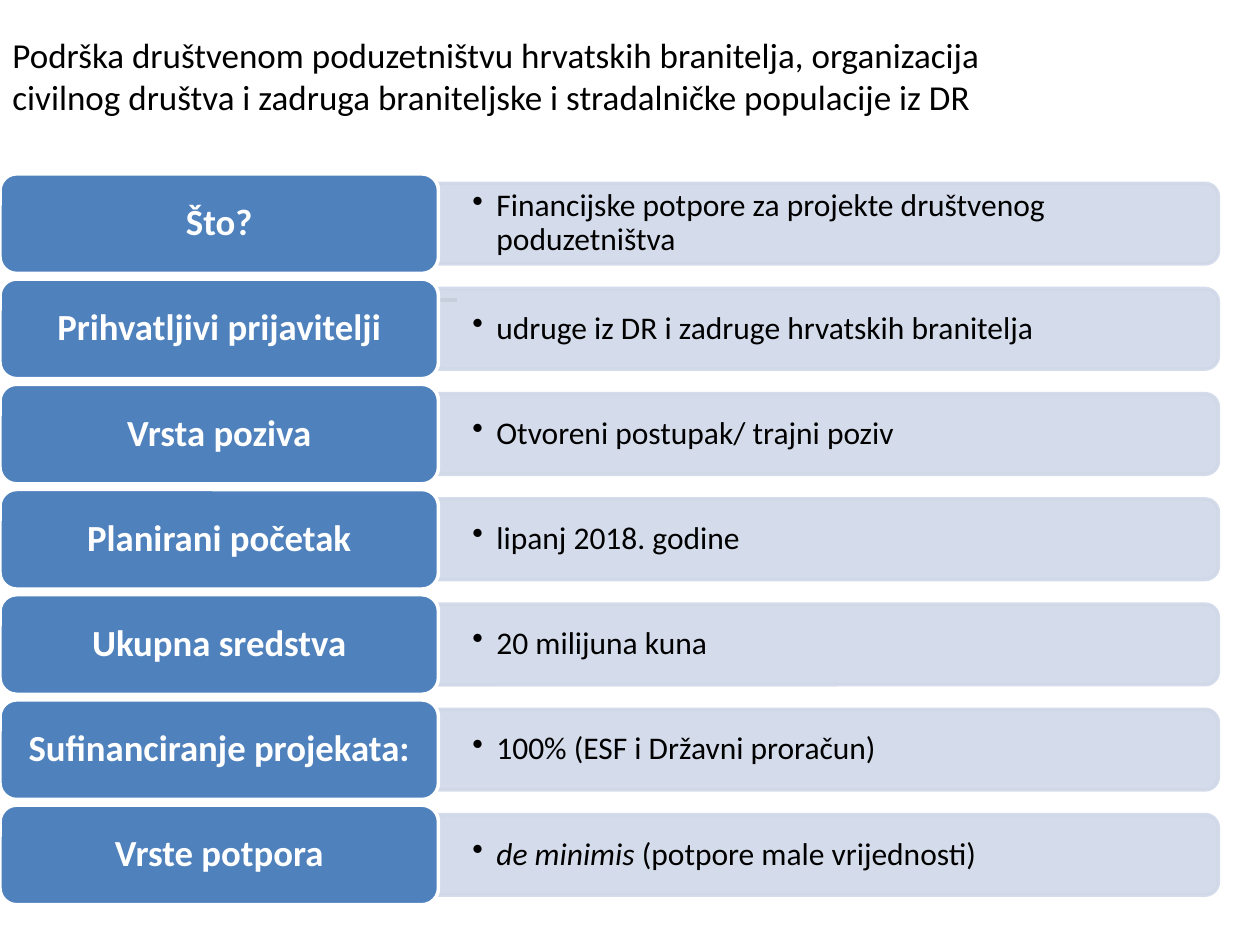
import pptx
import pptx.dml.color
import pptx.enum.shapes
import pptx.enum.text
import pptx.oxml.ns
import pptx.util
from lxml import etree
from pptx.util import Inches

COLORS = {
    "text": "000000",
    "label": "4F81BD",
    "label_text": "FFFFFF",
    "bar": "D0D8E8",
    "rule": "777877",
}
SHAPES = pptx.enum.shapes.MSO_SHAPE
ALIGN = pptx.enum.text.PP_ALIGN

# Label and the text runs of its detail, each run with its own format
ROWS = [
    ("Što?", [("Financijske potpore za projekte društvenog poduzetništva", {})]),
    ("Prihvatljivi prijavitelji", [("udruge iz DR i zadruge hrvatskih branitelja", {})]),
    ("Vrsta poziva", [("Otvoreni postupak/ trajni poziv", {})]),
    ("Planirani početak", [("lipanj 2018. godine", {})]),
    ("Ukupna sredstva", [("20 milijuna kuna", {})]),
    ("Sufinanciranje projekata:", [("100% (ESF i Državni proračun)", {})]),
    ("Vrste potpora", [("de minimis ", {"italic": True}), ("(potpore male vrijednosti)", {})]),
]

FIRST_CENTER = 1.775
ROW_PITCH = 0.835
LABEL_WIDTH, LABEL_HEIGHT = 3.48, 0.79
BAR_LENGTH, BAR_HEIGHT = 6.19, 0.64


def add_element(parent, tag, **attributes):
    return etree.SubElement(parent, pptx.oxml.ns.qn(tag), attributes)


class SlideBuilder:
    font_name = "Calibri"
    line_width = pptx.util.Pt(2)

    def __init__(self, slide):
        self.slide = slide

    def color(self, name):
        return pptx.dml.color.RGBColor.from_string(COLORS[name])

    def add_panel(self, kind, left, top, width, height, fill, line, rotation=0, opacity=None):
        shape = self.slide.shapes.add_shape(
            kind, Inches(left), Inches(top), Inches(width), Inches(height))
        shape.shadow.inherit = False
        shape.rotation = rotation
        shape.fill.solid()
        shape.fill.fore_color.rgb = self.color(fill)
        shape.line.color.rgb = self.color(line)
        shape.line.width = self.line_width
        if opacity is not None:
            for color_element in shape._element.spPr.iter(pptx.oxml.ns.qn("a:srgbClr")):
                add_element(color_element, "a:alpha", val=str(opacity * 1000))

    def add_text(self, left, top, width, height, runs, font, margins=(0.1, 0.05),
                 align=ALIGN.LEFT, line_spacing=1.0, bullet=False):
        box = self.slide.shapes.add_textbox(
            Inches(left), Inches(top), Inches(width), Inches(height))
        horizontal, vertical = (Inches(margin) for margin in margins)
        frame_format = {
            "word_wrap": True,
            "vertical_anchor": pptx.enum.text.MSO_ANCHOR.MIDDLE,
            "margin_left": horizontal,
            "margin_right": horizontal,
            "margin_top": vertical,
            "margin_bottom": vertical,
        }
        for name, value in frame_format.items():
            setattr(box.text_frame, name, value)
        paragraph = box.text_frame.paragraphs[0]
        paragraph.alignment = align
        paragraph.line_spacing = line_spacing
        if bullet:
            properties = paragraph._p.get_or_add_pPr()
            properties.set("marL", str(Inches(0.19)))
            properties.set("indent", str(Inches(-0.19)))
            add_element(properties, "a:buChar", char="•")
        for text, run_format in runs:
            run = paragraph.add_run()
            run.text = text
            font_format = {"name": self.font_name, **font, **run_format}
            run.font.color.rgb = self.color(font_format.pop("color"))
            for name, value in font_format.items():
                setattr(run.font, name, value)

    def add_rule(self, left, right, top):
        rule = self.slide.shapes.add_connector(
            pptx.enum.shapes.MSO_CONNECTOR.STRAIGHT,
            Inches(left), Inches(top), Inches(right), Inches(top))
        rule.line.color.rgb = self.color("rule")
        rule.line.width = self.line_width
        add_element(rule._element.spPr, "a:effectLst")

    def add_row(self, center, label, detail):
        # Detail bar: an upright shape turned so its round end faces right
        bar_center = LABEL_WIDTH + BAR_LENGTH / 2
        self.add_panel(
            SHAPES.ROUND_2_SAME_RECTANGLE, bar_center - BAR_HEIGHT / 2, center - BAR_LENGTH / 2,
            BAR_HEIGHT, BAR_LENGTH, "bar", "bar", rotation=90, opacity=90)
        self.add_text(
            LABEL_WIDTH, center - 0.285, 6.16, 0.57, detail,
            {"size": pptx.util.Pt(18), "color": "text"},
            margins=(0.27, 0.14), line_spacing=0.9, bullet=True)
        # Label
        self.add_panel(
            SHAPES.ROUNDED_RECTANGLE, 0, center - LABEL_HEIGHT / 2,
            LABEL_WIDTH, LABEL_HEIGHT, "label", "label_text")
        self.add_text(
            0.04, center - 0.36, LABEL_WIDTH - 0.08, 0.72, [(label, {})],
            {"size": pptx.util.Pt(21), "bold": True, "color": "label_text"},
            margins=(0.09, 0.04), align=ALIGN.CENTER, line_spacing=0.9)


def main():
    presentation = pptx.Presentation()
    presentation.slide_width = Inches(10)
    presentation.slide_height = Inches(7.5)
    builder = SlideBuilder(presentation.slides.add_slide(presentation.slide_layouts[6]))

    # Title
    title = ("Podrška društvenom poduzetništvu hrvatskih branitelja, organizacija "
             "civilnog društva i zadruga braniteljske i stradalničke populacije iz DR")
    builder.add_text(0, 0, 8.35, 1.2, [(title, {})],
                     {"size": pptx.util.Pt(20), "color": "text"})

    # Rule behind the rows
    builder.add_rule(0.5, 3.63, 2.38)

    # Rows of label and detail
    for index, (label, detail) in enumerate(ROWS):
        builder.add_row(FIRST_CENTER + index * ROW_PITCH, label, detail)

    presentation.save("out.pptx")


if __name__ == "__main__":
    main()
